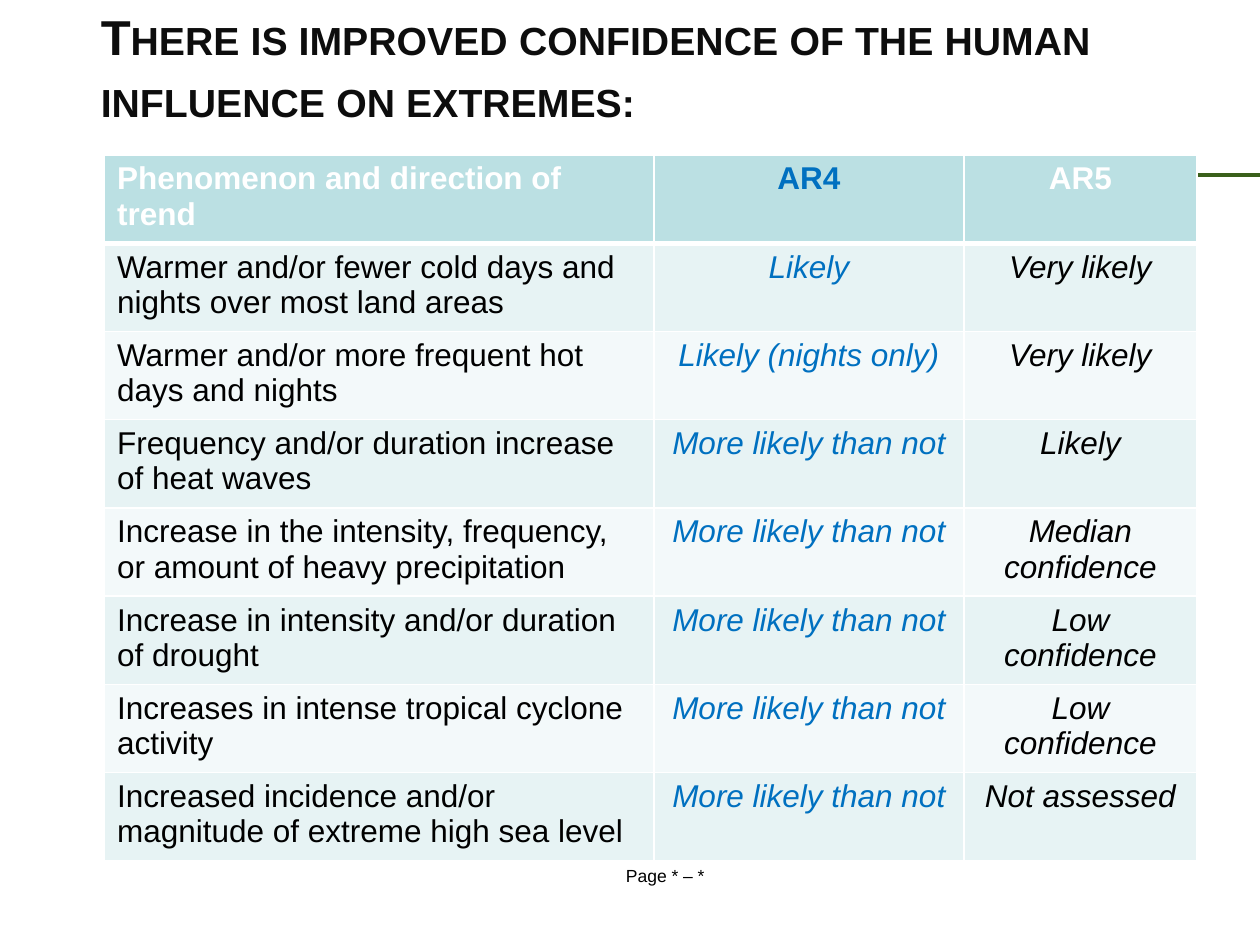
import pptx
import pptx.util
import pptx.dml.color
import pptx.enum.shapes
import pptx.enum.text
import pptx.oxml.ns
from lxml import etree

Inches, Pt = pptx.util.Inches, pptx.util.Pt
RGBColor = pptx.dml.color.RGBColor
ALIGN = pptx.enum.text.PP_ALIGN
qn = pptx.oxml.ns.qn

# Content
TITLE = "There is improved confidence of the human influence on extremes:"
FOOTER = "Page * – *"
HEADINGS = ("Phenomenon and direction of trend", "AR4", "AR5")
FINDINGS = [
    ("Warmer and/or fewer cold days and nights over most land areas", "Likely", "Very likely"),
    ("Warmer and/or more frequent hot days and nights", "Likely (nights only)", "Very likely"),
    ("Frequency and/or duration increase of heat waves", "More likely than not", "Likely"),
    ("Increase in the intensity, frequency, or amount of heavy precipitation",
     "More likely than not", "Median confidence"),
    ("Increase in intensity and/or duration of drought", "More likely than not", "Low confidence"),
    ("Increases in intense tropical cyclone activity", "More likely than not", "Low confidence"),
    ("Increased incidence and/or magnitude of extreme high sea level",
     "More likely than not", "Not assessed"),
]
COLUMN_WIDTHS = (4.36, 2.46, 1.85)
ROW_HEIGHT = 0.7

# Colours
BLACK = RGBColor(0, 0, 0)
WHITE = RGBColor(255, 255, 255)
TITLE_INK = RGBColor(0x0D, 0x0D, 0x0D)
AR4_BLUE = RGBColor(0x00, 0x70, 0xC0)
RULE_GREEN = RGBColor(0x3A, 0x60, 0x1B)
HEADER_FILL = RGBColor(0xBB, 0xE0, 0xE3)
BAND_FILLS = (RGBColor(0xE7, 0xF3, 0xF4), RGBColor(0xF3, 0xF9, 0xFA))


def write(frame, text, size=18, color=BLACK, bold=False, italic=False, align=ALIGN.LEFT):
    frame.word_wrap = True
    para = frame.paragraphs[0]
    para.alignment = align
    span = para.add_run()
    span.text = text
    font = span.font
    font.name, font.size, font.bold, font.italic = "Arial", Pt(size), bold, italic
    font.color.rgb = color
    return span


def add_borders(cell, widths):
    properties = cell._tc.get_or_add_tcPr()
    for side, width in zip("LRTB", widths):
        line = etree.SubElement(properties, qn(f"a:ln{side}"), w=str(Pt(width)))
        fill = etree.SubElement(line, qn("a:solidFill"))
        etree.SubElement(fill, qn("a:srgbClr"), val=str(WHITE))


deck = pptx.Presentation()
deck.slide_width, deck.slide_height = Inches(10), Inches(7.5)
page = deck.slides.add_slide(deck.slide_layouts[5])

# Title in small capitals
title = page.shapes.title
title.left, title.top, title.width, title.height = map(Inches, (0.7, 0.05, 8.56, 0.94))
title.text_frame.vertical_anchor = pptx.enum.text.MSO_ANCHOR.MIDDLE
title.text_frame.auto_size = pptx.enum.text.MSO_AUTO_SIZE.NONE
heading = write(title.text_frame, TITLE, size=28, color=TITLE_INK, bold=True)
heading.font._element.set("cap", "small")
title.text_frame.paragraphs[0].line_spacing = 1.05

# Footer and rule
footer = page.shapes.add_textbox(*map(Inches, (0.83, 6.82, 8.9, 0.27)))
write(footer.text_frame, FOOTER, size=10, align=ALIGN.CENTER)
rule = page.shapes.add_connector(
    pptx.enum.shapes.MSO_CONNECTOR.STRAIGHT, *map(Inches, (0.9, 1.39, 10, 1.39)))
rule.line.color.rgb = RULE_GREEN
rule.line.width = Pt(2.25)
etree.SubElement(rule._element.spPr, qn("a:effectLst"))

# Table of findings
rows = [HEADINGS] + FINDINGS
table = page.shapes.add_table(
    len(rows), len(HEADINGS), Inches(0.83), Inches(1.23),
    Inches(sum(COLUMN_WIDTHS)), Inches(ROW_HEIGHT * len(rows))).table
for column, width in zip(table.columns, COLUMN_WIDTHS):
    column.width = Inches(width)
for r, row in enumerate(rows):
    table.rows[r].height = Inches(ROW_HEIGHT)
    is_header = r == 0
    for c, text in enumerate(row):
        cell = table.cell(r, c)
        add_borders(cell, (1, 1, 3 if r == 1 else 1, 3 if is_header else 1))
        cell.fill.solid()
        cell.fill.fore_color.rgb = HEADER_FILL if is_header else BAND_FILLS[(r - 1) % 2]
        ink = AR4_BLUE if c == 1 else WHITE if is_header else BLACK
        write(cell.text_frame, text, color=ink, bold=is_header,
              italic=c > 0 and not is_header, align=ALIGN.CENTER if c else ALIGN.LEFT)

deck.save("out.pptx")
